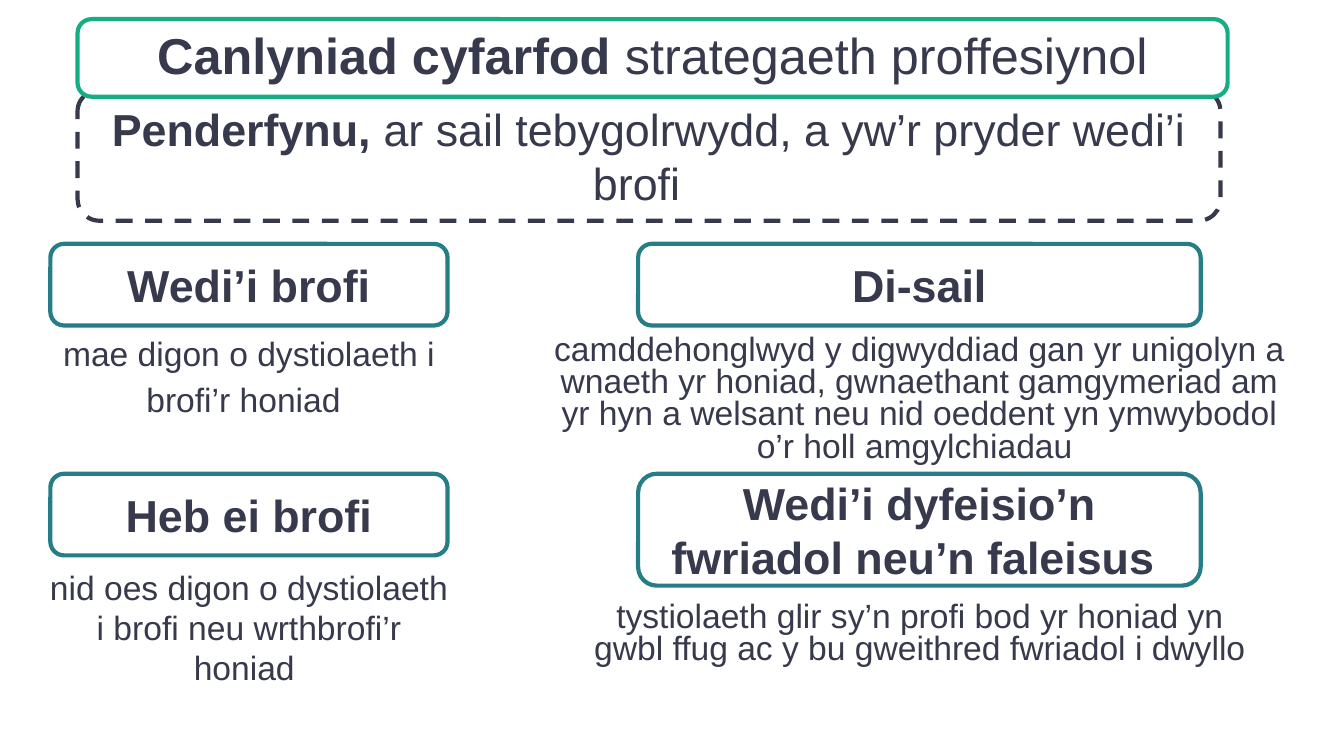
from pptx import Presentation
from pptx.dml.color import RGBColor
from pptx.enum import dml, shapes, text
from pptx.util import Pt

INK, GREEN, TEAL, WHITE = "37394C", "16AD85", "257D86", "FFFFFF"

BANNERS = [
    {"at": (55.4, 64.1, 816.5, 93.6), "line": INK, "dash": True, "anchor": text.MSO_ANCHOR.BOTTOM,
     "runs": [("Penderfynu, ", 32, True),
              ("ar sail tebygolrwydd, a yw’r pryder wedi’i brofi  ", 32, False)]},
    {"at": (55.4, 13.7, 821.5, 55.4), "line": GREEN, "corner": 0.18, "spacing": 0.9,
     "runs": [("Canlyniad cyfarfod ", 36, True), ("strategaeth proffesiynol", 36, False)]},
]
COLUMNS = {"left": (36, 283.7), "right": (455.8, 401.8)}
ROWS = (174.2, 338.4)
OUTCOMES = [
    {"column": "left", "row": 0, "height": 58.3, "heading": "Wedi’i brofi",
     "note_at": (18.7, 216.7, 318.2, 105.1),
     "note": [("mae digon o dystiolaeth i brofi’r honiad", 24, False), (" ", 28, False)]},
    {"column": "left", "row": 1, "height": 58.3, "heading": "Heb ei brofi",
     "note_at": (18.7, 395.3, 318.2, 105.1),
     "note": [("nid oes digon o dystiolaeth i brofi neu wrthbrofi’r honiad ", 24, False)]},
    {"column": "right", "row": 0, "height": 58.3, "heading": "Di-sail",
     "note_at": (385.2, 236.2, 542.9, 77),
     "note": [("camddehonglwyd y digwyddiad gan yr unigolyn a wnaeth yr honiad, "
               "gwnaethant gamgymeriad am yr hyn a welsant neu nid oeddent yn "
               "ymwybodol o’r holl amgylchiadau ", 24, False)]},
    {"column": "right", "row": 1, "height": 79.9,
     "heading": "Wedi’i dyfeisio’n fwriadol neu’n faleisus ",
     "note_at": (416.9, 427, 480.2, 77),
     "note": [("tystiolaeth glir sy’n profi bod yr honiad yn gwbl ffug "
               "ac y bu gweithred fwriadol i dwyllo", 24, False)]},
]


def colour(value):
    return RGBColor.from_string(value)


def write(box, runs, anchor, spacing=None):
    frame = box.text_frame
    frame.word_wrap = True
    frame.vertical_anchor = anchor
    para = frame.paragraphs[0]
    para.alignment = text.PP_ALIGN.CENTER
    if spacing:
        para.line_spacing = spacing
    for words, size, bold in runs:
        span = para.add_run()
        span.text = words
        for name, value in {"name": "Arial", "size": Pt(size), "bold": bold}.items():
            setattr(span.font, name, value)
        span.font.color.rgb = colour(INK)


def add_panel(page, at, runs, line=None, fill=None, dash=False, corner=0.167,
              anchor=text.MSO_ANCHOR.MIDDLE, spacing=None):
    box = page.shapes.add_shape(shapes.MSO_SHAPE.ROUNDED_RECTANGLE, *map(Pt, at))
    box.shadow.inherit = False
    box.adjustments[0] = corner
    if fill:
        box.fill.solid()
        box.fill.fore_color.rgb = colour(fill)
    else:
        box.fill.background()
    if line:
        box.line.color.rgb = colour(line)
        box.line.width = Pt(3)
        if dash:
            box.line.dash_style = dml.MSO_LINE.DASH
    else:
        box.line.fill.background()
    write(box, runs, anchor, spacing)


def add_outcome(page, outcome):
    left, width = COLUMNS[outcome["column"]]
    heading_at = (left, ROWS[outcome["row"]], width, outcome["height"])
    add_panel(page, heading_at, [(outcome["heading"], 32, True)], line=TEAL)
    if outcome["column"] == "left":
        add_panel(page, outcome["note_at"], outcome["note"])
    else:
        box = page.shapes.add_textbox(*map(Pt, outcome["note_at"]))
        write(box, outcome["note"], text.MSO_ANCHOR.TOP, spacing=0.8)


def main():
    deck = Presentation()
    deck.slide_width, deck.slide_height = Pt(960), Pt(540)
    page = deck.slides.add_slide(deck.slide_layouts[6])
    for banner in BANNERS:
        add_panel(page, fill=WHITE, **banner)
    for outcome in OUTCOMES:
        add_outcome(page, outcome)
    deck.save("out.pptx")


if __name__ == "__main__":
    main()
